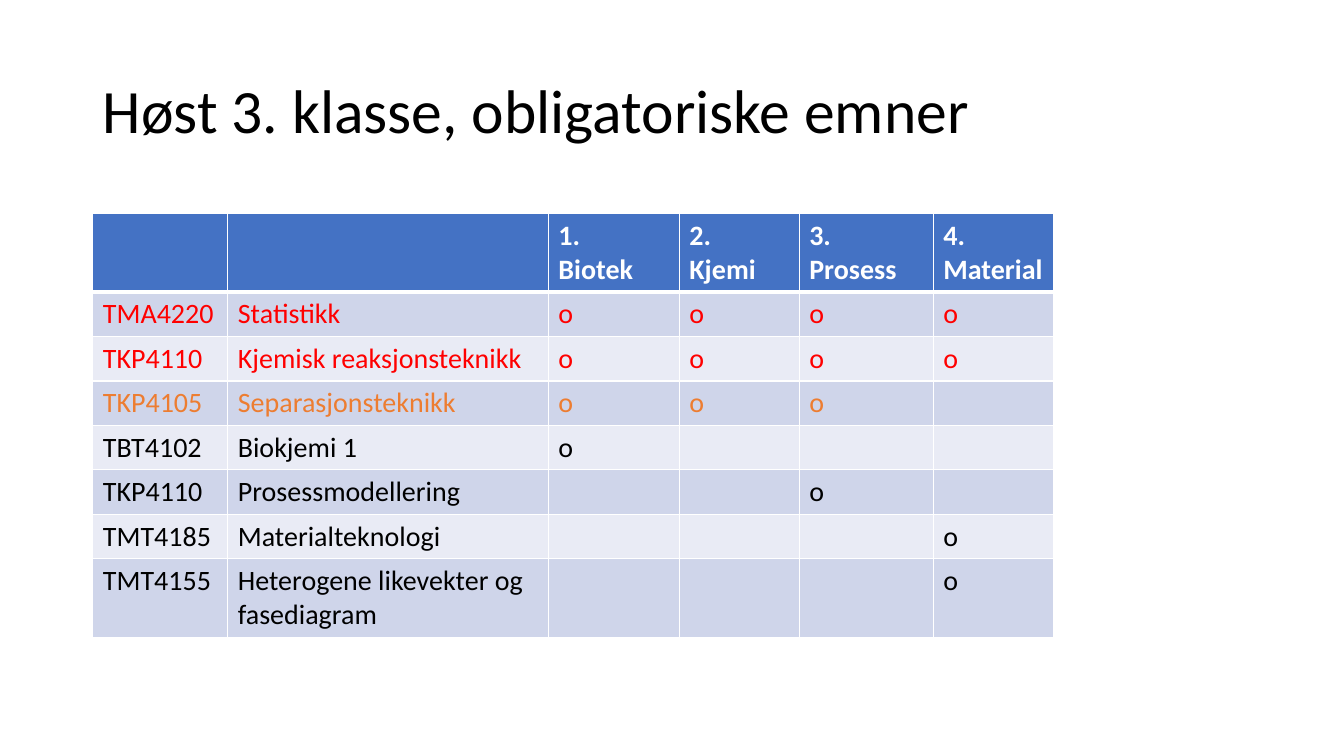
from lxml.etree import SubElement
from pptx import Presentation
from pptx.dml.color import RGBColor as Rgb
from pptx.enum.text import MSO_ANCHOR as Anchor
from pptx.oxml.ns import qn
from pptx.util import Cm, Pt

TITLE = "Høst 3. klasse, obligatoriske emner"
PROGRAMMES = ["1.\nBiotek", "2.\nKjemi", "3.\nProsess", "4.\nMaterial"]
COURSES = [
    ("TMA4220", "Statistikk", (1, 2, 3, 4), "all"),
    ("TKP4110", "Kjemisk reaksjonsteknikk", (1, 2, 3, 4), "all"),
    ("TKP4105", "Separasjonsteknikk", (1, 2, 3), "most"),
    ("TBT4102", "Biokjemi 1", (1,), "text"),
    ("TKP4110", "Prosessmodellering", (3,), "text"),
    ("TMT4185", "Materialteknologi", (4,), "text"),
    ("TMT4155", "Heterogene likevekter og fasediagram", (4,), "text"),
]
THEME = {
    "font": "Calibri", "title_size": 44, "table_size": 20,
    "text": "000000", "white": "FFFFFF", "all": "FF0000", "most": "ED7D31",
    "header": "4472C4", "bands": ("CFD5EA", "E9EBF5"),
    "thin": 1, "thick": 3,
}
TITLE_BOX = (2.34, 1.02, 29.21, 3.68)
TABLE_LEFT, TABLE_TOP = 2.34, 5.38
COLUMN_WIDTHS = [3.4, 8.08, 3.3, 3.02, 3.38, 3.03]
SINGLE_ROW, DOUBLE_ROW = 1.12, 1.98
ROW_HEIGHTS = [DOUBLE_ROW] + [SINGLE_ROW] * (len(COURSES) - 1) + [DOUBLE_ROW]


def write(frame, text, size, color, bold=False):
    frame.text = text
    values = {"name": THEME["font"], "size": Pt(size), "bold": bold}
    for para in frame.paragraphs:
        for font in [para.font] + [span.font for span in para.runs]:
            for name, value in values.items():
                setattr(font, name, value)
            font.color.rgb = Rgb.from_string(color)


def add_borders(cell, widths):
    properties = cell._tc.get_or_add_tcPr()
    for position, (side, width) in enumerate(widths.items()):
        line = SubElement(properties, qn(f"a:ln{side}"), w=str(Pt(width)))
        fill = SubElement(line, qn("a:solidFill"))
        SubElement(fill, qn("a:srgbClr"), val=THEME["white"])
        properties.insert(position, line)


def add_title(slide):
    box = slide.shapes.add_textbox(*map(Cm, TITLE_BOX))
    frame = box.text_frame
    frame.word_wrap = True
    frame.vertical_anchor = Anchor.MIDDLE
    write(frame, TITLE, THEME["title_size"], THEME["text"])
    frame.paragraphs[0].line_spacing = 0.9


def add_course_table(slide):
    rows = [(["", ""] + PROGRAMMES, THEME["white"])]
    for code, name, required, tone in COURSES:
        marks = ["o" if number in required else ""
                 for number in range(1, len(PROGRAMMES) + 1)]
        rows.append(([code, name] + marks, THEME[tone]))

    table = slide.shapes.add_table(
        len(rows), len(COLUMN_WIDTHS), Cm(TABLE_LEFT), Cm(TABLE_TOP),
        Cm(sum(COLUMN_WIDTHS)), Cm(sum(ROW_HEIGHTS))).table
    for column, width in zip(table.columns, COLUMN_WIDTHS):
        column.width = Cm(width)
    for row, height in zip(table.rows, ROW_HEIGHTS):
        row.height = Cm(height)

    thin, thick = THEME["thin"], THEME["thick"]
    for index, (texts, color) in enumerate(rows):
        is_header = index == 0
        fill = THEME["header"] if is_header else THEME["bands"][(index - 1) % 2]
        borders = {"L": thin, "R": thin,
                   "T": thick if index == 1 else thin,
                   "B": thick if is_header else thin}
        for cell, text in zip(table.rows[index].cells, texts):
            write(cell.text_frame, text, THEME["table_size"], color, is_header)
            cell.fill.solid()
            cell.fill.fore_color.rgb = Rgb.from_string(fill)
            add_borders(cell, borders)


def main():
    deck = Presentation()
    deck.slide_width, deck.slide_height = Cm(33.87), Cm(19.05)
    page = deck.slides.add_slide(deck.slide_layouts[6])
    add_title(page)
    add_course_table(page)
    deck.save("out.pptx")


if __name__ == "__main__":
    main()
